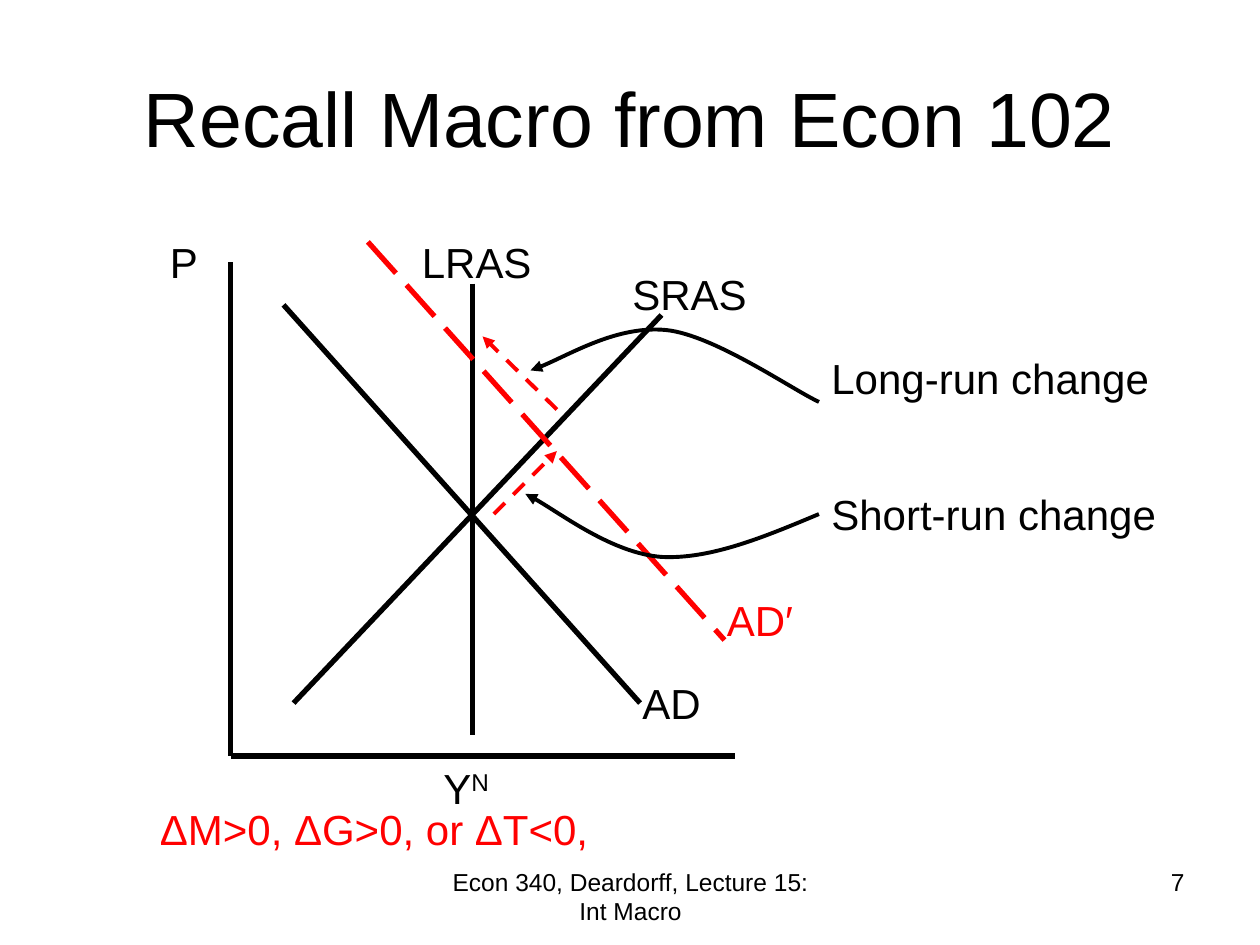
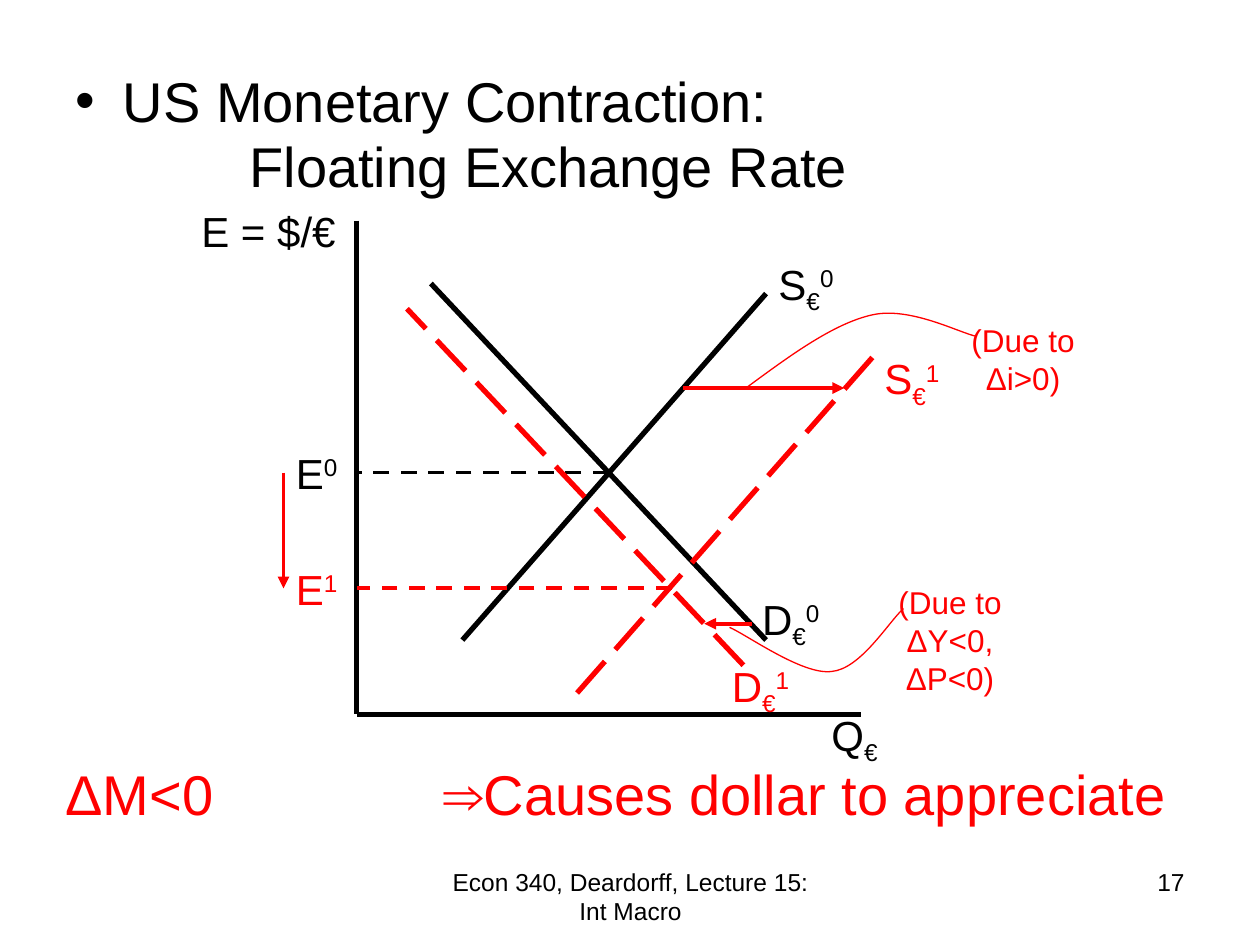
from lxml import etree
from pptx import Presentation
from pptx.dml.color import RGBColor
from pptx.enum import dml, text
from pptx.enum.shapes import MSO_CONNECTOR
from pptx.oxml.ns import qn
from pptx.util import Inches, Pt

BLACK = RGBColor(0, 0, 0)
RED = RGBColor(255, 0, 0)
FONT = "Arial"
FOOTER = "Econ 340, Deardorff, Lecture 15: Int Macro"
LONG, SHORT = dml.MSO_LINE.LONG_DASH, dml.MSO_LINE.DASH
LEFT, CENTER, RIGHT = text.PP_ALIGN.LEFT, text.PP_ALIGN.CENTER, text.PP_ALIGN.RIGHT
BASELINES = {"^": "30000", "_": "-25000"}


def style_run(r, size, color):
    r.font.name = FONT
    r.font.size = Pt(size)
    r.font.color.rgb = color


def place(sp, left, top, width, height):
    sp.left, sp.top = Inches(left), Inches(top)
    sp.width, sp.height = Inches(width), Inches(height)


def split_scripts(marked):
    """Split 'S_€^0' into (text, baseline) pairs; a mark raises or lowers one letter."""
    parts, base = [], None
    for ch in marked:
        if ch in BASELINES:
            base = BASELINES[ch]
        elif base or not parts or parts[-1][1]:
            parts.append((ch, base))
            base = None
        else:
            parts[-1] = (parts[-1][0] + ch, None)
    return parts


def add_label(s, marked, left, top, width=1.17, height=0.5, color=BLACK, size=24,
              align=LEFT, spacing=None):
    sp = s.shapes.add_textbox(0, 0, 0, 0)
    place(sp, left, top, width, height)
    tf = sp.text_frame
    tf.word_wrap = True
    p = tf.paragraphs[0]
    p.alignment = align
    if spacing:
        p.line_spacing = spacing
    for part, base in split_scripts(marked):
        r = p.add_run()
        r.text = part
        style_run(r, size, color)
        if base:
            r._r.get_or_add_rPr().set("baseline", base)


def style_line(sp, color, width, dash=None, arrow=False):
    sp.line.color.rgb = color
    sp.line.width = Pt(width)
    if dash:
        sp.line.dash_style = dash
    if arrow:
        ln = sp._element.spPr.find(qn("a:ln"))
        etree.SubElement(ln, qn("a:tailEnd"), type="triangle")


def add_line(s, start, end, color=BLACK, width=3, dash=None, arrow=False):
    ends = [Inches(v) for v in (*start, *end)]
    sp = s.shapes.add_connector(MSO_CONNECTOR.STRAIGHT, *ends)
    style_line(sp, color, width, dash, arrow)
    etree.SubElement(sp._element.spPr, qn("a:effectLst"))


def add_curve(s, points, color, width, arrow=False):
    """Bezier curve: a start point, then three points for each segment."""
    start, *rest = [(Inches(x), Inches(y)) for x, y in points]
    builder = s.shapes.build_freeform(*start)
    builder.add_line_segments(rest, close=False)
    sp = builder.convert_to_shape()
    sp.fill.background()
    sp.shadow.inherit = False
    style_line(sp, color, width, arrow=arrow)
    # Turn each three straight steps into one cubic segment
    steps = list(sp._element.iter(qn("a:lnTo")))
    path = steps[0].getparent()
    for i in range(0, len(steps), 3):
        cubic = etree.SubElement(path, qn("a:cubicBezTo"))
        for step in steps[i:i + 3]:
            cubic.append(step[0])
            path.remove(step)


def add_axes(s, left, top):
    corner = (left, top + 3.92)
    add_line(s, (left, top), corner)
    add_line(s, corner, (left + 4, corner[1]))


def add_footer(s, number):
    add_label(s, str(number), 7.17, 6.83, 2.33, 0.52, size=14, align=RIGHT)
    add_label(s, FOOTER, 3.42, 6.83, 3.17, 0.52, size=14, align=CENTER)


def build_recall(prs):
    s = prs.slides.add_slide(prs.slide_layouts[5])
    title = s.shapes.title
    place(title, 0.5, 0.3, 9, 1.25)
    tf = title.text_frame
    tf.text = "Recall Macro from Econ 102"
    tf.vertical_anchor = text.MSO_ANCHOR.MIDDLE
    tf.paragraphs[0].alignment = CENTER
    style_run(tf.paragraphs[0].runs[0], 44, BLACK)

    # Supply and demand curves
    add_axes(s, 1.83, 2.08)
    add_line(s, (2.33, 5.58), (5.25, 2.5))
    add_line(s, (3.75, 2.25), (3.75, 5.83))
    add_line(s, (2.25, 2.42), (5.08, 5.58))
    for name, left, top in (("Y^N", 3.42, 6), ("P", 1.25, 1.83), ("LRAS", 3.25, 1.83),
                            ("SRAS", 4.92, 2.08), ("AD", 5, 5.33)):
        add_label(s, name, left, top)

    # Demand shift and the path it causes
    add_line(s, (2.92, 1.92), (5.75, 5.08), RED, dash=LONG)
    add_label(s, "AD′", 5.67, 4.67, color=RED)
    add_line(s, (3.92, 4.08), (4.42, 3.58), RED, 2.25, SHORT, arrow=True)
    add_line(s, (4.42, 3.25), (3.83, 2.67), RED, 2.25, SHORT, arrow=True)
    add_label(s, "Short-run change", 6.5, 3.83, 3.25)
    add_label(s, "Long-run change", 6.5, 2.75, 3.25)
    add_label(s, "ΔM>0, ΔG>0, or ΔT<0,", 1.17, 6.33, 3.92, color=RED)

    # Pointers from the remarks
    add_curve(s, [(6.5, 4.08), (6.07, 4.26), (5.64, 4.44), (5.25, 4.42),
                  (4.86, 4.39), (4.35, 4), (4.17, 3.92)], BLACK, 2.25, arrow=True)
    add_curve(s, [(6.5, 3.19), (6.3, 3.1), (5.67, 2.66), (5.29, 2.62),
                  (4.9, 2.58), (4.43, 2.87), (4.21, 2.94)], BLACK, 2.25, arrow=True)
    add_footer(s, 7)


def add_heading(s, lines):
    """Bulleted first line, with an indented line below it."""
    title = s.shapes.title
    title._element.getparent().remove(title._element)
    body = s.placeholders[1]
    place(body, 0.5, 0.58, 9, 0.83)
    tf = body.text_frame
    tf.auto_size = text.MSO_AUTO_SIZE.NONE
    tf.text = "\n".join(lines)
    for p in tf.paragraphs:
        p.line_spacing = 0.8
        p.space_before = Pt(6.4)
        style_run(p.runs[0], 32, BLACK)
    pPr = tf.paragraphs[1]._p.get_or_add_pPr()
    pPr.set("marL", str(Inches(1.38)))
    pPr.set("indent", "0")
    etree.SubElement(pPr, qn("a:buNone"))


def build_contraction(prs):
    s = prs.slides.add_slide(prs.slide_layouts[1])
    add_heading(s, ["US Monetary Contraction:", "Floating Exchange Rate"])

    # Starting market
    add_axes(s, 2.83, 1.75)
    add_line(s, (3.67, 5.08), (6.08, 2.33))
    add_line(s, (6.08, 5.08), (3.42, 2.25))
    add_label(s, "S_€^0", 6.08, 2, 0.75)
    add_label(s, "D_€^0", 5.95, 4.66, 0.83)
    add_label(s, "Q_€", 6.5, 5.58, 0.67)
    add_label(s, "E = $/€", 1.5, 1.58, 1.33)
    add_line(s, (4.83, 3.75), (2.83, 3.75), BLACK, 2.25, SHORT)
    add_label(s, "E^0", 2.25, 3.5, 1.33)

    # Market after the contraction
    add_line(s, (5.9, 5.28), (3.23, 2.45), RED, dash=LONG)
    add_label(s, "D_€^1", 5.71, 5.19, 0.83, color=RED)
    add_line(s, (5.33, 4.67), (2.83, 4.67), RED, 2.25, SHORT)
    add_label(s, "E^1", 2.25, 4.42, 1.33, color=RED)
    add_line(s, (4.58, 5.5), (7, 2.75), RED, dash=LONG)
    add_label(s, "S_€^1", 6.92, 2.75, 0.83, color=RED)

    # Shift arrows
    for start, end in (((5.97, 4.95), (5.59, 4.95)),
                       ((2.25, 3.75), (2.25, 4.67)),
                       ((5.42, 3.08), (6.7, 3.08))):
        add_line(s, start, end, RED, 2.25, arrow=True)

    # Cause, effect and reasons
    add_label(s, "ΔM<0", 0.42, 6.08, 2.67, 0.83, RED, 32, spacing=0.8)
    add_label(s, "⇒Causes dollar to appreciate", 3.42, 6.08, 6.17, 0.83, RED, 32,
              spacing=0.8)
    add_label(s, "(Due to ΔY<0, ΔP<0)", 7, 4.58, 1.08, 1, RED, 18, CENTER)
    add_label(s, "(Due to Δi>0)", 7.58, 2.5, 1.08, 0.7, RED, 18, CENTER)
    add_curve(s, [(5.92, 3.08), (6.26, 2.83), (6.61, 2.57), (6.92, 2.5),
                  (7.22, 2.43), (7.61, 2.64), (7.75, 2.67)], RED, 0.75)
    add_curve(s, [(5.79, 4.98), (5.93, 5.04), (6.37, 5.36), (6.6, 5.33),
                  (6.83, 5.31), (7.05, 4.94), (7.17, 4.83)], RED, 0.75)
    add_footer(s, 17)


def main():
    prs = Presentation()
    prs.slide_width, prs.slide_height = Inches(10), Inches(7.5)
    build_recall(prs)
    build_contraction(prs)
    prs.save("out.pptx")


if __name__ == "__main__":
    main()
